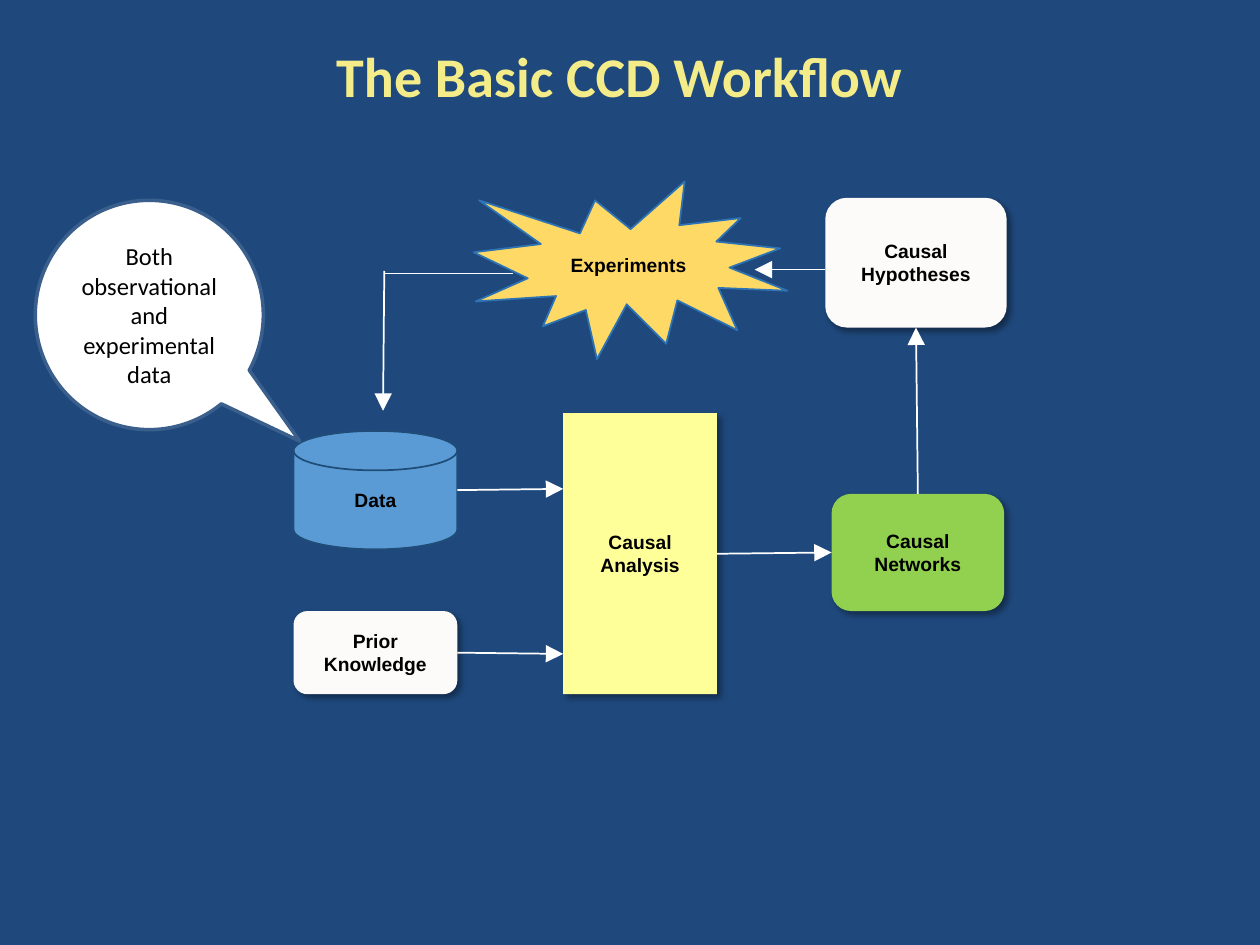
from dataclasses import dataclass

from lxml.etree import SubElement as Sub
from pptx import Presentation
from pptx.dml.color import RGBColor as Rgb
from pptx.enum.shapes import MSO_CONNECTOR as Conn, MSO_SHAPE as Kind
from pptx.enum.text import MSO_ANCHOR as Anchor, PP_ALIGN as Align
from pptx.oxml.ns import qn
from pptx.util import Inches, Pt

COLS, ROWS = 100, 75
WIDE, HIGH = Inches(10), Inches(7.5)
TOP, LEFT, BASE, RIGHT = 0, 1, 2, 3


@dataclass(frozen=True)
class Theme:
    back: str = "1F497D"
    title: str = "F4EC88"
    ink: str = "000000"
    white: str = "FFFFFF"
    pale: str = "FCFBF9"
    gold: str = "FFD966"
    blue: str = "5B9BD5"
    cream: str = "FFFF99"
    green: str = "92D050"
    star: str = "2E74B5"
    disk: str = "1F4D78"
    ring: str = "3A5F8C"
    head: str = "Calibri"
    body: str = "Arial"
    big: int = 32
    note: int = 14
    small: int = 11


T = Theme()


def at(x, y):
    """Turn grid columns and rows into slide lengths."""
    return round(x * WIDE / COLS), round(y * HIGH / ROWS)


def write(shape, text, font, size, color, bold=False):
    frame = shape.text_frame
    frame.word_wrap = True
    frame.vertical_anchor = Anchor.MIDDLE
    frame.text = text
    for para in frame.paragraphs:
        para.alignment = Align.CENTER
        face = para.font
        face.name, face.size, face.bold = font, Pt(size), bold
        face.color.rgb = Rgb.from_string(color)


def shade(shape):
    """Add a soft shadow to the lower right."""
    list_ = shape._element.spPr.find(qn("a:effectLst"))
    drop = Sub(list_, qn("a:outerShdw"), blurRad=str(Pt(4)), dist=str(Pt(3)),
               dir=str(45 * 60000), algn="tl", rotWithShape="0")
    tint = Sub(drop, qn("a:srgbClr"), val=T.ink)
    Sub(tint, qn("a:alpha"), val="40000")


def block(slide, kind, box, fill, line=None, width=1):
    x, y, w, h = box
    shape = slide.shapes.add_shape(kind, *at(x, y), *at(w, h))
    shape.shadow.inherit = False
    shape.fill.solid()
    shape.fill.fore_color.rgb = Rgb.from_string(fill)
    if line:
        shape.line.color.rgb = Rgb.from_string(line)
        shape.line.width = Pt(width)
    else:
        shape.line.fill.background()
    return shape


def link(slide, start, end, arrow=True):
    """Draw a line; each end is a point or a (shape, side) pair."""
    spots = [(0, 0) if hasattr(p[0], "shape_id") else at(*p)
             for p in (start, end)]
    wire = slide.shapes.add_connector(Conn.STRAIGHT, *spots[0], *spots[1])
    for p, join in ((start, wire.begin_connect), (end, wire.end_connect)):
        if hasattr(p[0], "shape_id"):
            join(*p)
    wire.line.color.rgb = Rgb.from_string(T.white)
    wire.line.width = Pt(1)
    if arrow:
        Sub(wire.line._get_or_add_ln(), qn("a:tailEnd"),
            type="triangle", w="lg", len="lg")
    Sub(wire._element.spPr, qn("a:effectLst"))


def title(slide, box):
    x, y, w, h = box
    shape = slide.shapes.add_textbox(*at(x, y), *at(w, h))
    write(shape, "The Basic CCD Workflow", T.head, T.big, T.title, True)


def flow(slide, box):
    left, top, wide, high = box

    def spot(x, y):
        return left + x, top + y

    def node(text, kind, x, y, w, h, fill, line=None):
        shape = block(slide, kind, (*spot(x, y), w, h), fill, line)
        write(shape, text, T.body, T.small, T.ink, True)
        if not line:
            shade(shape)
        return shape

    # Nodes: sources left, analysis in the middle, results right
    side, mid = 13, 21.4
    net_w, hyp_w = 13.7, 14.4
    net_x, hyp_x = 42.7, wide - hyp_w
    node("Experiments", Kind.EXPLOSION1, 14.3, 0, 24.9, 14.1, T.gold, T.star)
    node("Data", Kind.FLOWCHART_MAGNETIC_DISK, 0, 19.8, side, 9.4,
         T.blue, T.disk)
    prior = node("Prior Knowledge", Kind.ROUNDED_RECTANGLE,
                 0, high - 6.6, side, 6.6, T.pale)
    study = node("Causal\nAnalysis", Kind.RECTANGLE,
                 mid, high - 22.3, 12.2, 22.3, T.cream)
    nets = node("Causal Networks", Kind.ROUNDED_RECTANGLE,
                net_x, 24.8, net_w, 9.3, T.green)
    hypo = node("Causal Hypotheses", Kind.ROUNDED_RECTANGLE,
                hyp_x, 1.3, hyp_w, 10.3, T.pale)

    # Links around the loop
    link(slide, spot(side, 24.5), spot(mid, 24.4))
    link(slide, (prior, RIGHT), spot(mid, 37.5))
    link(slide, (study, RIGHT), (nets, LEFT))
    link(slide, (nets, TOP), (hypo, BASE))
    link(slide, spot(hyp_x, 7), spot(36.6, 7))
    link(slide, spot(17.4, 7.3), spot(7.2, 7.3), arrow=False)
    link(slide, spot(7.2, 7.1), spot(7.1, 18.2))


def callout(slide, box):
    shape = block(slide, Kind.OVAL_CALLOUT, box, T.white, T.ring, 2)
    shape.adjustments[0], shape.adjustments[1] = 0.66, 0.55
    write(shape, "Both observational and experimental data",
          T.head, T.note, T.ink)


def main():
    deck = Presentation()
    deck.slide_width, deck.slide_height = WIDE, HIGH
    slide = deck.slides.add_slide(deck.slide_layouts[6])
    fill = slide.background.fill
    fill.solid()
    fill.fore_color.rgb = Rgb.from_string(T.back)
    flow(slide, (23.3, 14.4, 56.6, 40.7))
    title(slide, (0, 0.8, 98.3, 10.3))
    callout(slide, (2.8, 15.9, 18.1, 18.2))
    deck.save("out.pptx")


if __name__ == "__main__":
    main()
